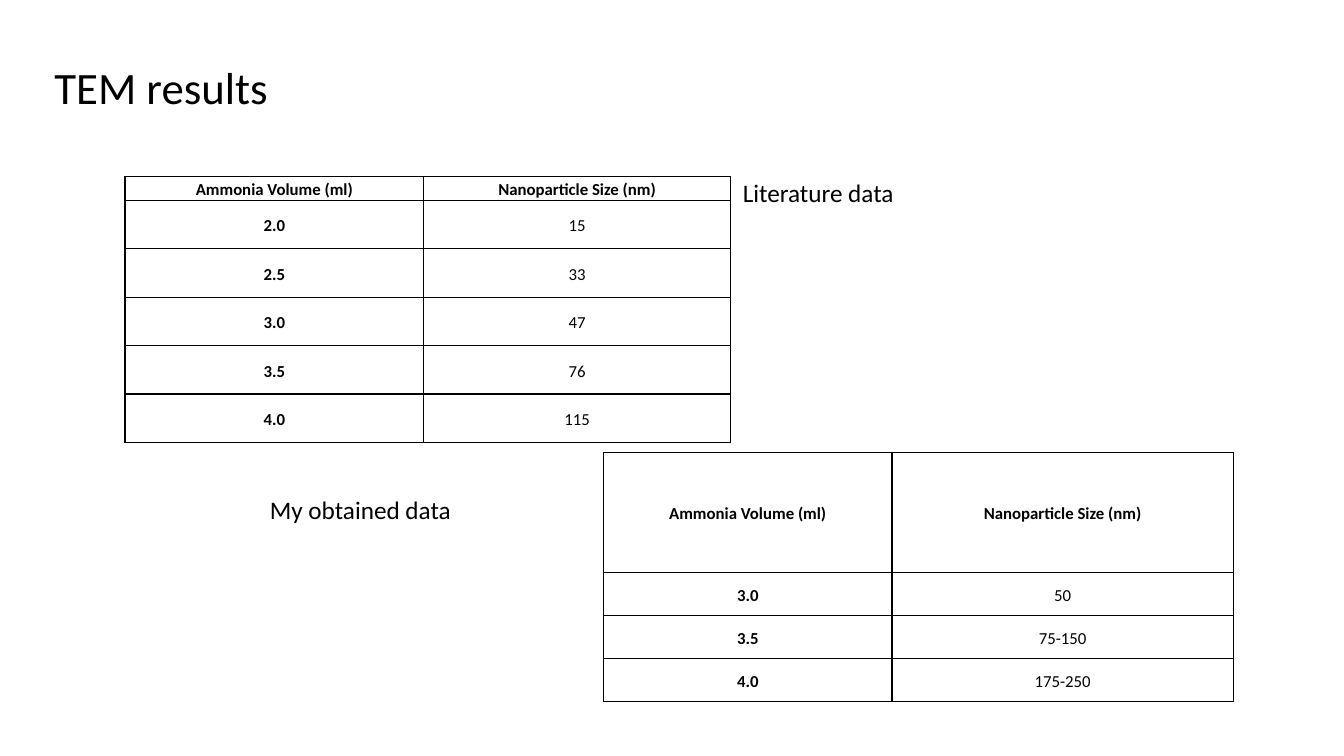
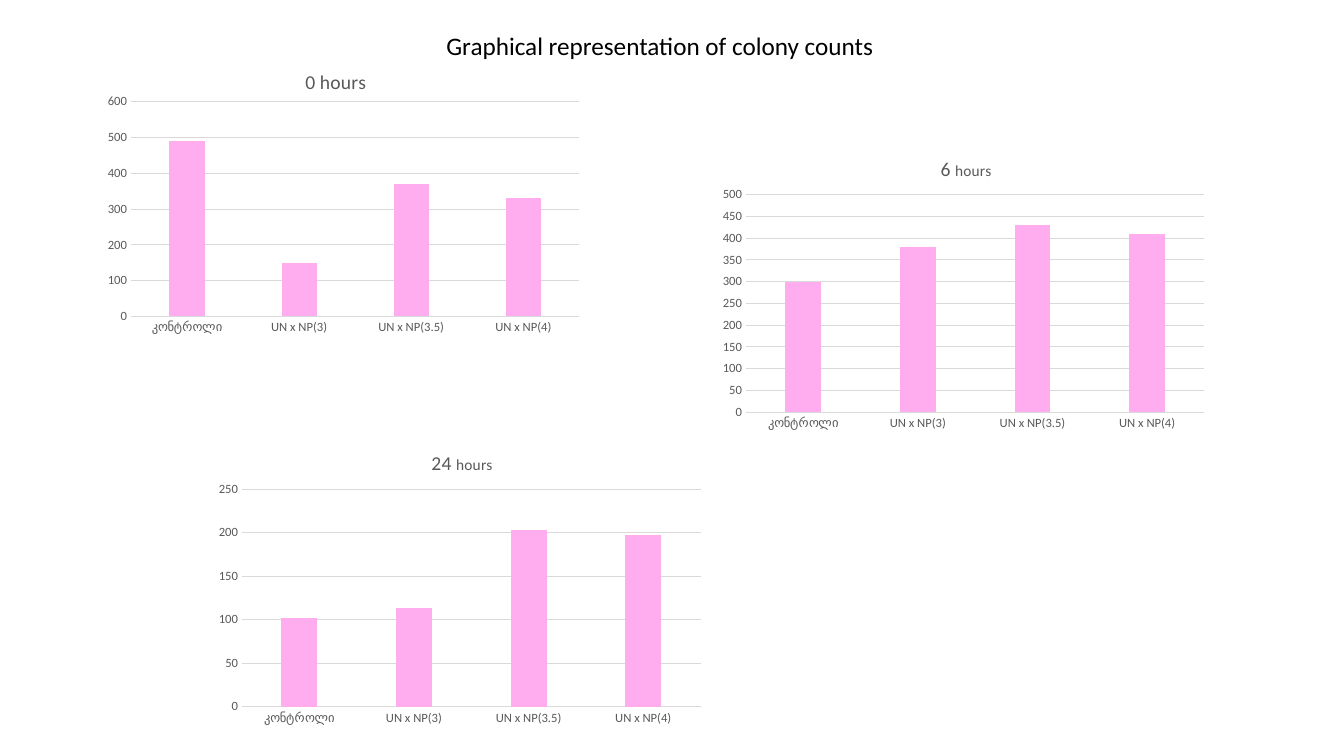
import pptx
import pptx.chart.data
import pptx.dml.color
import pptx.enum.chart
import pptx.enum.text
import pptx.oxml
import pptx.oxml.ns
import pptx.util
from pptx.util import Cm, Pt

COLORS = {"ink": "000000", "paper": "FFFFFF", "label": "595959",
          "grid": "D9D9D9", "bar": "FFADEF"}
FONT = "Calibri"
TABLE_HEADER = ("Ammonia Volume (ml)", "Nanoparticle Size (nm)")
SAMPLES = ("კონტროლი", "UN x NP(3)", "UN x NP(3.5)", "UN x NP(4)")
CHART_WIDTH, CHART_HEIGHT = Cm(12.7), Cm(7.62)


def rgb(name):
    return pptx.dml.color.RGBColor.from_string(COLORS[name])


def style_font(font, size, color="ink", bold=False):
    font.name, font.size, font.bold = FONT, Pt(size), bold
    font.color.rgb = rgb(color)


def add_borders(cell, width=Pt(1)):
    """Draw all four cell edges; call before the cell is filled."""
    properties = cell._tc.get_or_add_tcPr()
    for edge in ("lnL", "lnR", "lnT", "lnB"):
        properties.append(pptx.oxml.parse_xml(
            f'<a:{edge} {pptx.oxml.ns.nsdecls("a")} w="{width}"><a:solidFill>'
            f'<a:srgbClr val="{COLORS["ink"]}"/></a:solidFill></a:{edge}>'))


def set_layout(parent, index, target="", **fractions):
    """Place a chart part by fractions of the chart area."""
    for old in parent.findall(pptx.oxml.ns.qn("c:layout")):
        parent.remove(old)
    inner = f'<c:layoutTarget val="{target}"/>' if target else ""
    modes = "".join(f'<c:{key}Mode val="edge"/>' for key in "xy")
    places = "".join(f'<c:{key} val="{value}"/>' for key, value in fractions.items())
    parent.insert(index, pptx.oxml.parse_xml(
        f'<c:layout {pptx.oxml.ns.nsdecls("c")}><c:manualLayout>'
        f'{inner}{modes}{places}</c:manualLayout></c:layout>'))


class Deck:
    def __init__(self):
        self.presentation = pptx.Presentation()
        self.presentation.slide_width = Cm(33.87)
        self.presentation.slide_height = Cm(19.05)
        self.slide = None

    def new_slide(self):
        self.slide = self.presentation.slides.add_slide(
            self.presentation.slide_layouts[6])

    def text(self, wording, left, top, width, height=1.02, size=18):
        frame = self.slide.shapes.add_textbox(
            Cm(left), Cm(top), Cm(width), Cm(height)).text_frame
        frame.word_wrap = False
        frame.auto_size = pptx.enum.text.MSO_AUTO_SIZE.SHAPE_TO_FIT_TEXT
        frame.text = wording
        style_font(frame.paragraphs[0].font, size)

    def size_table(self, sizes, left, top, widths, header_height, row_height):
        """Table of particle size by ammonia volume, volumes in bold."""
        rows = [TABLE_HEADER, *sizes]
        heights = [header_height] + [row_height] * len(sizes)
        table = self.slide.shapes.add_table(
            len(rows), len(widths), Cm(left), Cm(top),
            Cm(sum(widths)), Cm(sum(heights))).table
        table.first_row = table.horz_banding = False
        for column, width in zip(table.columns, widths):
            column.width = Cm(width)
        for row, height in zip(table.rows, heights):
            row.height = Cm(height)
        for r, row in enumerate(rows):
            for c, wording in enumerate(row):
                self.cell(table.cell(r, c), wording, bold=r == 0 or c == 0)

    def cell(self, cell, wording, bold):
        add_borders(cell)
        cell.fill.solid()
        cell.fill.fore_color.rgb = rgb("paper")
        cell.margin_left = cell.margin_right = Cm(0.17)
        cell.margin_top = cell.margin_bottom = 0
        cell.vertical_anchor = pptx.enum.text.MSO_ANCHOR.MIDDLE
        cell.text = wording
        paragraph = cell.text_frame.paragraphs[0]
        paragraph.alignment = pptx.enum.text.PP_ALIGN.CENTER
        paragraph.line_spacing = 1.15
        paragraph.space_after = Pt(8)
        style_font(paragraph.font, 12, bold=bold)

    def colony_chart(self, hours, counts, left, top, axis_max, axis_step,
                     plot, title_at, unit_size=11):
        data = pptx.chart.data.CategoryChartData()
        data.categories = SAMPLES
        data.add_series("Series 1", counts)
        chart = self.slide.shapes.add_chart(
            pptx.enum.chart.XL_CHART_TYPE.COLUMN_CLUSTERED, Cm(left), Cm(top),
            CHART_WIDTH, CHART_HEIGHT, data).chart
        style_font(chart.font, 10)
        chart.has_legend = False

        title = chart.chart_title.text_frame.paragraphs[0]
        for wording, size in ((f"{hours} ", 14), ("hours", unit_size)):
            run = title.add_run()
            run.text = wording
            style_font(run.font, size, "label")
        set_layout(chart.chart_title._element, 1, x=title_at[0], y=title_at[1])
        set_layout(chart._chartSpace.chart.plotArea, 0, "inner",
                   **dict(zip("xywh", plot)))

        bars = chart.plots[0]
        bars.gap_width, bars.overlap = 219, -27
        bars.vary_by_categories = False
        fill = bars.series[0].format.fill
        fill.solid()
        fill.fore_color.rgb = rgb("bar")

        samples, colonies = chart.category_axis, chart.value_axis
        for axis in (samples, colonies):
            style_font(axis.tick_labels.font, 9, "label")
            axis.major_tick_mark = pptx.enum.chart.XL_TICK_MARK.NONE
            axis.minor_tick_mark = pptx.enum.chart.XL_TICK_MARK.NONE
        colonies.minimum_scale, colonies.maximum_scale = 0, axis_max
        colonies.major_unit = axis_step
        colonies.format.line.fill.background()
        colonies.has_major_gridlines = True
        for line in (samples.format.line, colonies.major_gridlines.format.line):
            line.color.rgb = rgb("grid")
            line.width = Pt(0.75)


def tem_results(deck):
    deck.new_slide()
    deck.size_table(
        [("2.0", "15"), ("2.5", "33"), ("3.0", "47"), ("3.5", "76"), ("4.0", "115")],
        3.15, 4.45, (7.53, 7.73), 0.6, 1.22)
    deck.size_table(
        [("3.0", "50"), ("3.5", "75-150"), ("4.0", "175-250")],
        15.21, 11.4, (7.27, 8.6), 3.03, 1.08)
    deck.text("TEM results", 1.12, 1.37, 6.27, 1.62, size=32)
    deck.text("Literature data", 18.47, 4.34, 4.47)
    deck.text("My obtained data", 6.55, 12.32, 5.21)


def colony_counts(deck):
    deck.new_slide()
    wide_plot = (0.07, 0.2, 0.91, 0.72)
    deck.colony_chart(0, (490, 150, 370, 330), 2.03, 1.27, 600, 100,
                      (0.1, 0.17, 0.89, 0.71), (0.44, 0.05), unit_size=14)
    deck.colony_chart(6, (300, 380, 430, 410), 17.91, 3.38, 500, 50,
                      wide_plot, (0.45, 0.06))
    deck.colony_chart(24, (102, 113, 203, 197), 5.21, 10.8, 250, 50,
                      wide_plot, (0.44, 0.06))
    deck.text("Graphical representation of colony counts", 11, 0.64, 11.4)


def main():
    deck = Deck()
    tem_results(deck)
    colony_counts(deck)
    deck.presentation.save("out.pptx")


if __name__ == "__main__":
    main()
